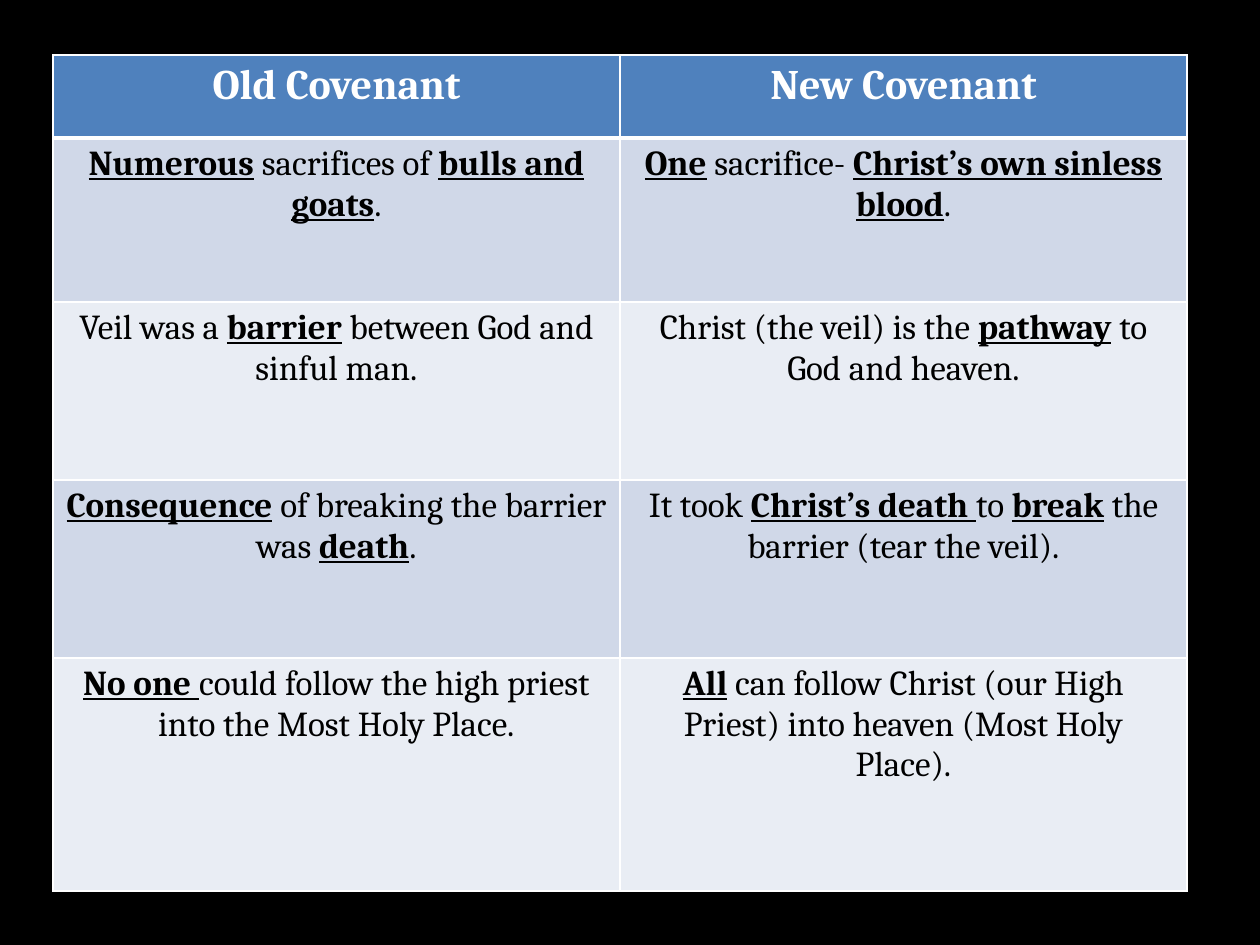
from dataclasses import dataclass

from lxml import etree
from pptx import Presentation
from pptx import util as u
from pptx.dml.color import RGBColor
from pptx.enum import text
from pptx.oxml.ns import qn

PX = 914400 / 126
FONT = "Cambria"
BLACK = RGBColor(0x00, 0x00, 0x00)
WHITE = RGBColor(0xFF, 0xFF, 0xFF)
BLUE = RGBColor(0x4F, 0x81, 0xBD)
BAND_DARK = RGBColor(0xD0, 0xD8, 0xE8)
BAND_LIGHT = RGBColor(0xE9, 0xED, 0xF4)

LEFT, TOP, COLUMN_WIDTH = 53, 55, 567
THIN, THICK = 1, 3


@dataclass(frozen=True)
class Row:
    """One comparison; words between asterisks are bold and underlined."""
    height: int
    old: str
    new: str


HEADER = Row(83, "Old Covenant", "New Covenant")
BODY = [
    Row(164, "*Numerous* sacrifices of *bulls and goats*.",
        "*One* sacrifice- *Christ’s own sinless blood*."),
    Row(178, "Veil was a *barrier* between God and sinful man.",
        "Christ (the veil) is the *pathway* to God and heaven."),
    Row(178, "*Consequence* of breaking the barrier was *death*.",
        "It took *Christ’s death *to *break* the barrier (tear the veil)."),
    Row(233, "*No one *could follow the high priest into the Most Holy Place.",
        "*All* can follow Christ (our High Priest) into heaven (Most Holy Place)."),
]


def px(length: int) -> u.Emu:
    return u.Emu(round(length * PX))


def set_borders(cell, top: int, bottom: int) -> None:
    """Draw white cell borders; widths are in points."""
    properties = cell._tc.get_or_add_tcPr()
    widths = {"a:lnL": THIN, "a:lnR": THIN, "a:lnT": top, "a:lnB": bottom}
    for index, (tag, width) in enumerate(widths.items()):
        line = etree.Element(qn(tag), w=str(u.Pt(width)))
        fill = etree.SubElement(line, qn("a:solidFill"))
        etree.SubElement(fill, qn("a:srgbClr"), val=str(WHITE))
        properties.insert(index, line)


def write_cell(cell, content: str, fill: RGBColor, color: RGBColor, size: int) -> None:
    cell.fill.solid()
    cell.fill.fore_color.rgb = fill
    para = cell.text_frame.paragraphs[0]
    para.alignment = text.PP_ALIGN.CENTER
    for index, part in enumerate(content.split("*")):
        if not part:
            continue
        span = para.add_run()
        span.text = part
        font = span.font
        font.name, font.size = FONT, u.Pt(size)
        font.color.rgb = color
        emphasized = index % 2 == 1
        font.bold = emphasized or fill == BLUE
        font.underline = emphasized


def add_comparison(page, rows: list[Row]) -> None:
    height = sum(row.height for row in rows)
    table = page.shapes.add_table(
        len(rows), 2, px(LEFT), px(TOP), px(2 * COLUMN_WIDTH), px(height)).table
    for column in table.columns:
        column.width = px(COLUMN_WIDTH)
    for index, row in enumerate(rows):
        table.rows[index].height = px(row.height)
        if index == 0:
            fill, color, size = BLUE, WHITE, 24
        else:
            fill, color, size = (BAND_DARK if index % 2 else BAND_LIGHT), BLACK, 20
        for column_index, content in enumerate((row.old, row.new)):
            cell = table.cell(index, column_index)
            write_cell(cell, content, fill, color, size)
            set_borders(cell, top=THICK if index == 1 else THIN,
                        bottom=THICK if index == 0 else THIN)


def main() -> None:
    deck = Presentation()
    deck.slide_width, deck.slide_height = px(1260), px(945)
    page = deck.slides.add_slide(deck.slide_layouts[6])
    page.background.fill.solid()
    page.background.fill.fore_color.rgb = BLACK
    add_comparison(page, [HEADER, *BODY])
    deck.save("out.pptx")


if __name__ == "__main__":
    main()
